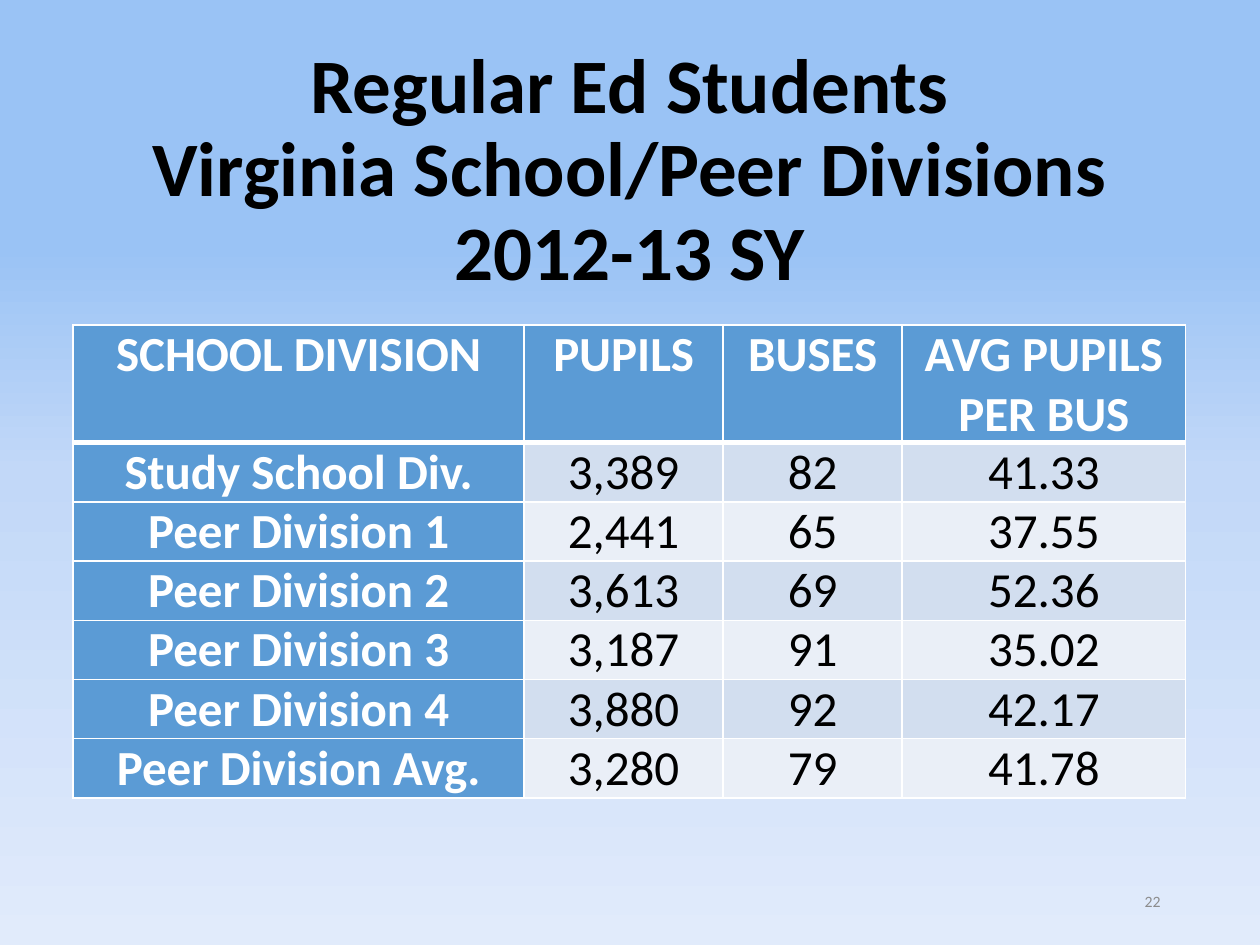
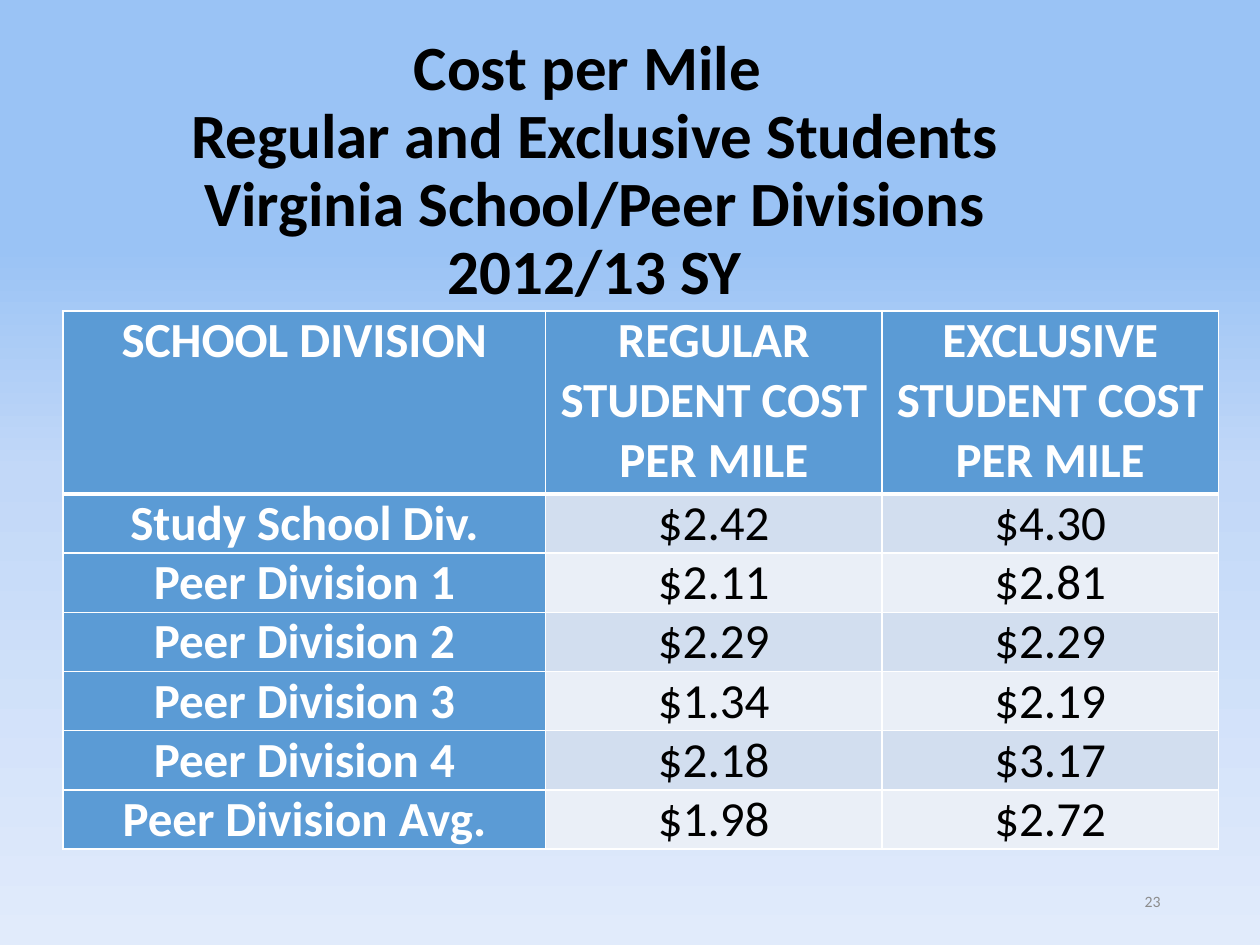
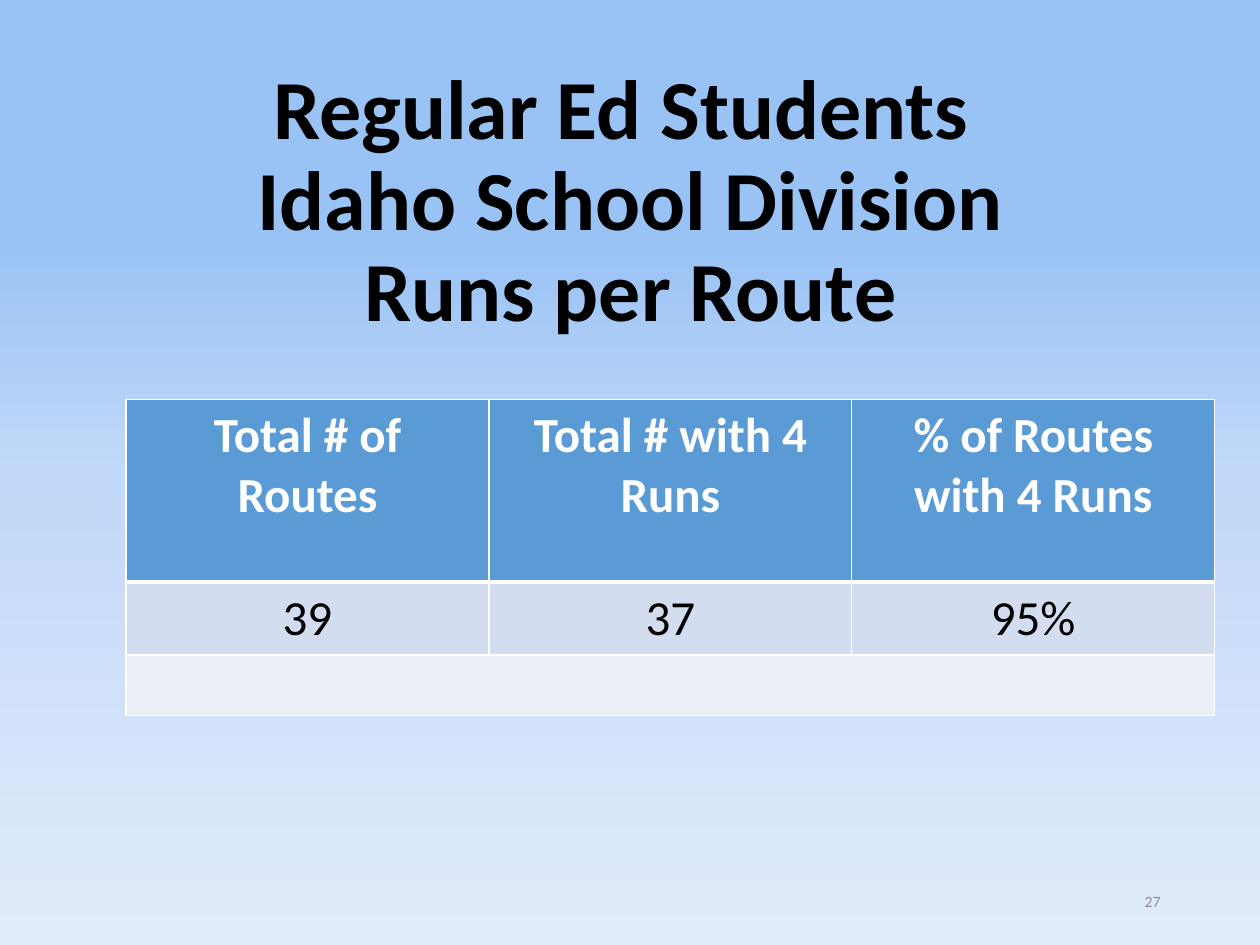
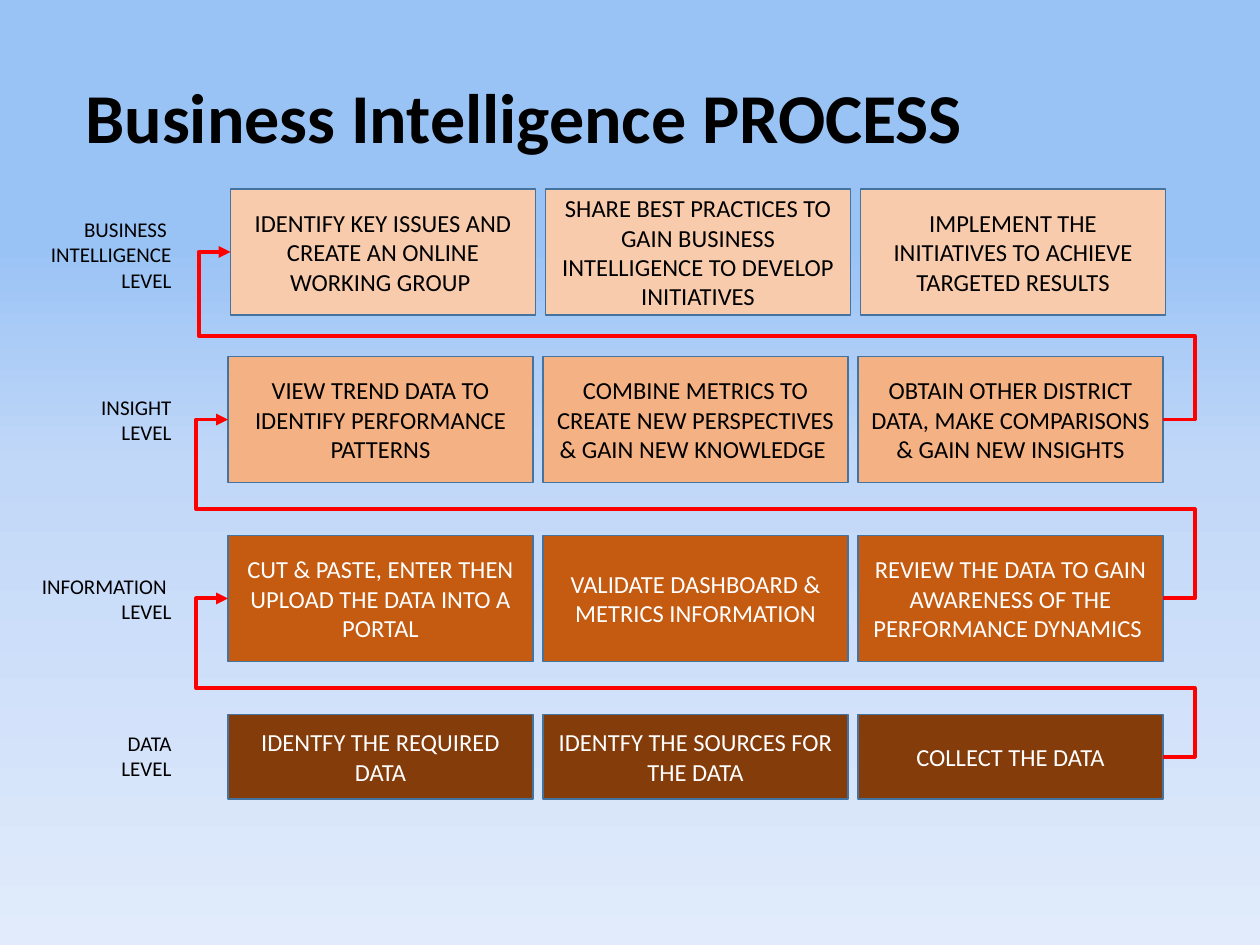
from lxml import etree
from pptx import Presentation
from pptx.dml.color import RGBColor
from pptx.enum.shapes import MSO_CONNECTOR, MSO_SHAPE
from pptx.enum.text import MSO_ANCHOR, PP_ALIGN
from pptx.oxml.ns import qn
from pptx.util import Inches, Pt

LEFT, CENTER, RIGHT = PP_ALIGN.LEFT, PP_ALIGN.CENTER, PP_ALIGN.RIGHT
TOP, MIDDLE = MSO_ANCHOR.TOP, MSO_ANCHOR.MIDDLE
RECT, ELBOW = MSO_SHAPE.RECTANGLE, MSO_CONNECTOR.ELBOW

COLORS = {
    "black": "000000", "white": "FFFFFF", "gray": "8C8C8C", "red": "FF0000",
    "header": "5B9BD5", "band_dark": "D2DEEF", "band_light": "EAEFF7",
    "outline": "43739E", "data": "843C0B", "information": "C55A11",
    "insight": "F4B183", "intelligence": "F8CBAD",
}
BACKGROUND = [(26, "9AC3F5"), (50, "C2D8F8"), (100, "E1EBFB")]
FONT = "Calibri"


def rgb(name):
    return RGBColor.from_string(COLORS[name])


def add(parent, tag, **attrs):
    el = etree.SubElement(parent, qn(tag))
    for key, value in attrs.items():
        el.set(key, str(value))
    return el


class Deck:
    def __init__(self):
        self.prs = Presentation()
        self.prs.slide_width, self.prs.slide_height = Inches(10), Inches(7.5)
        self.s = None
        self.set_background()

    def set_background(self):
        master = self.prs.slide_master
        fill = master.background.fill
        fill.gradient()
        fill.gradient_angle = 270
        stops = next(master.element.iter(qn("a:gsLst")))
        for stop in list(stops):
            stops.remove(stop)
        for pos, color in BACKGROUND:
            add(add(stops, "a:gs", pos=pos * 1000), "a:srgbClr", val=color)

    def new_slide(self):
        self.s = self.prs.slides.add_slide(self.prs.slide_layouts[6])

    def fill_text(self, tf, paragraphs, size, color="black", bold=False, align=CENTER, spacing=None):
        for i, text in enumerate(paragraphs):
            p = tf.add_paragraph() if i else tf.paragraphs[0]
            p.text = text
            p.alignment = align
            if spacing:
                p.line_spacing = spacing
            for r in p.runs:
                for key, value in {"name": FONT, "size": Pt(size), "bold": bold}.items():
                    setattr(r.font, key, value)
                r.font.color.rgb = rgb(color)

    def text(self, box, paragraphs, size, anchor=MIDDLE, **style):
        tf = self.s.shapes.add_textbox(*map(Inches, box)).text_frame
        tf.word_wrap = True
        tf.vertical_anchor = anchor
        self.fill_text(tf, paragraphs, size, **style)

    def title(self, box, text, size, align=CENTER):
        self.text(box, [text], size, bold=True, align=align, spacing=0.9)

    def number(self, number):
        self.text((7.06, 6.95, 2.25, 0.4), [str(number)], 9, color="gray", align=RIGHT)

    def box(self, box, text, fill, color):
        sp = self.s.shapes.add_shape(RECT, *map(Inches, box))
        sp.shadow.inherit = False
        sp.fill.solid()
        sp.fill.fore_color.rgb = rgb(fill)
        sp.line.color.rgb = rgb("outline")
        sp.line.width = Pt(1)
        sp.text_frame.word_wrap = True
        sp.text_frame.vertical_anchor = MIDDLE
        self.fill_text(sp.text_frame, [text], 14, color=color)
        return sp

    def return_arrow(self, start, end):
        c = self.s.shapes.add_connector(ELBOW, 0, 0, 0, 0)
        c.begin_connect(start, 3)
        c.end_connect(end, 1)
        c.line.color.rgb = rgb("red")
        c.line.width = Pt(2.25)
        side = Inches(0.25) / (c.begin_x - c.end_x)
        gap_middle = (start.top + end.top + end.height) / 2
        turn = (c.begin_y - gap_middle) / (c.begin_y - c.end_y)
        pr = c._element.spPr
        geom = pr.find(qn("a:prstGeom"))
        geom.set("prst", "bentConnector5")
        for old in list(geom):
            geom.remove(old)
        guides = add(geom, "a:avLst")
        for i, ratio in enumerate((-side, turn, 1 + side), 1):
            add(guides, "a:gd", name=f"adj{i}", fmla=f"val {round(ratio * 100000)}")
        add(pr.find(qn("a:ln")), "a:tailEnd", type="triangle")
        add(pr, "a:effectLst")

    def borders(self, cell, row):
        pr = cell._tc.get_or_add_tcPr()
        widths = {"L": 1, "R": 1, "T": 3 if row == 1 else 1, "B": 1 if row else 3}
        for i, (side, width) in enumerate(widths.items()):
            ln = add(pr, f"a:ln{side}", w=Pt(width))
            add(add(ln, "a:solidFill"), "a:srgbClr", val=COLORS["white"])
            pr.insert(i, ln)

    def table(self, at, widths, heights, rows, labels=True, margins=(0.07, 0)):
        size = sum(widths), sum(heights)
        t = self.s.shapes.add_table(len(rows), len(widths), *map(Inches, (*at, *size))).table
        t.first_col = labels
        for column, width in zip(t.columns, widths):
            column.width = Inches(width)
        for row, height in zip(t.rows, heights):
            row.height = Inches(height)
        dx, dy = map(Inches, margins)
        for i, values in enumerate(rows):
            for j, value in enumerate(values):
                cell = t.cell(i, j)
                strong = i == 0 or (labels and j == 0)
                cell.margin_left = cell.margin_right = dx
                cell.margin_top = cell.margin_bottom = dy
                cell.fill.solid()
                band = "band_dark" if i % 2 else "band_light"
                cell.fill.fore_color.rgb = rgb("header" if strong else band)
                self.borders(cell, i)
                self.fill_text(cell.text_frame, [value], 28, bold=strong,
                               color="white" if strong else "black")
        return t


DIVISIONS = ["Study School Div.", *(f"Peer Division {n}" for n in range(1, 5)), "Peer Division Avg."]
PUPILS = ["3,389", "2,441", "3,613", "3,187", "3,880", "3,280"]
BUSES = ["82", "65", "69", "91", "92", "79"]
AVERAGES = ["41.33", "37.55", "52.36", "35.02", "42.17", "41.78"]
REGULAR = ["$2.42", "$2.11", "$2.29", "$1.34", "$2.18", "$1.98"]
EXCLUSIVE = ["$4.30", "$2.81", "$2.29", "$2.19", "$3.17", "$2.72"]

LEVELS = [
    ("data", "white", 1.81, 5.67, 0.67, ["DATA LEVEL"], (0.63, 5.75, 0.83, 0.5),
     ["IDENTFY THE REQUIRED DATA", "IDENTFY THE SOURCES FOR THE DATA", "COLLECT THE DATA"]),
    ("information", "white", 1.81, 4.25, 1, ["INFORMATION ", "LEVEL"], (0.08, 4.5, 1.38, 0.5),
     ["CUT & PASTE, ENTER THEN UPLOAD THE DATA INTO A PORTAL",
      "VALIDATE DASHBOARD & METRICS INFORMATION",
      "REVIEW THE DATA TO GAIN AWARENESS OF THE PERFORMANCE DYNAMICS "]),
    ("insight", "black", 1.81, 2.83, 1, ["INSIGHT", "LEVEL"], (0.62, 3.08, 0.84, 0.5),
     ["VIEW TREND DATA TO IDENTIFY PERFORMANCE PATTERNS",
      "COMBINE METRICS TO CREATE NEW PERSPECTIVES & GAIN NEW KNOWLEDGE ",
      "OBTAIN OTHER DISTRICT DATA, MAKE COMPARISONS & GAIN NEW INSIGHTS"]),
    ("intelligence", "black", 1.83, 1.5, 1, ["BUSINESS ", "INTELLIGENCE", "LEVEL"],
     (0.15, 1.67, 1.31, 0.71),
     ["IDENTIFY KEY ISSUES AND CREATE AN ONLINE WORKING GROUP ",
      "SHARE BEST PRACTICES TO GAIN BUSINESS INTELLIGENCE TO DEVELOP INITIATIVES",
      "IMPLEMENT THE INITIATIVES TO ACHIEVE TARGETED RESULTS"]),
]


def pupils_slide(deck):
    deck.new_slide()
    deck.title((0.69, 0.64, 8.62, 1.45),
               "Regular Ed Students\nVirginia School/Peer Divisions\n2012-13 SY", 44)
    header = ("SCHOOL DIVISION", "PUPILS", "BUSES", "AVG PUPILS PER BUS")
    deck.table((0.58, 2.58), [3.58, 1.58, 1.42, 2.25], [0.93] + [0.47] * 6,
               [header, *zip(DIVISIONS, PUPILS, BUSES, AVERAGES)])
    deck.number(22)


def cost_slide(deck):
    deck.new_slide()
    deck.title((0.69, 0.27, 8.06, 2.19),
               "Cost per Mile \nRegular and Exclusive Students\n"
               "Virginia School/Peer Divisions\n2012/13 SY", 36)
    header = ("SCHOOL DIVISION", "REGULAR STUDENT COST PER MILE", "EXCLUSIVE STUDENT COST PER MILE")
    deck.table((0.5, 2.47), [3.83, 2.67, 2.67], [1.45] + [0.47] * 6,
               [header, *zip(DIVISIONS, REGULAR, EXCLUSIVE)])
    deck.number(23)


def runs_slide(deck):
    deck.new_slide()
    deck.title((0.17, 0.4, 9.67, 2.43),
               "Regular Ed Students \nIdaho School Division\nRuns per Route", 48)
    t = deck.table((1, 3.17), [2.88] * 3, [1.45, 0.58, 0.48],
                   [("Total # of Routes", "Total # with 4 Runs", "% of Routes with 4 Runs"),
                    ("39", "37", "95%"), ("", "", "")],
                   labels=False, margins=(0.1, 0.05))
    t.cell(2, 0).merge(t.cell(2, 2))
    deck.number(27)


def process_slide(deck):
    deck.new_slide()
    deck.title((0.58, 0.67, 8.74, 0.58), "Business Intelligence PROCESS", 40, align=LEFT)
    rows = []
    for fill, color, left, top, height, label, label_box, steps in LEVELS:
        rows.append([deck.box((left + 2.5 * i, top, 2.42, height), step, fill, color)
                     for i, step in enumerate(steps)])
        deck.text(label_box, label, 12, anchor=TOP, align=RIGHT)
    for lower, upper in zip(rows, rows[1:]):
        deck.return_arrow(lower[-1], upper[0])


def main():
    deck = Deck()
    for build in (pupils_slide, cost_slide, runs_slide, process_slide):
        build(deck)
    deck.prs.save("out.pptx")


if __name__ == "__main__":
    main()
